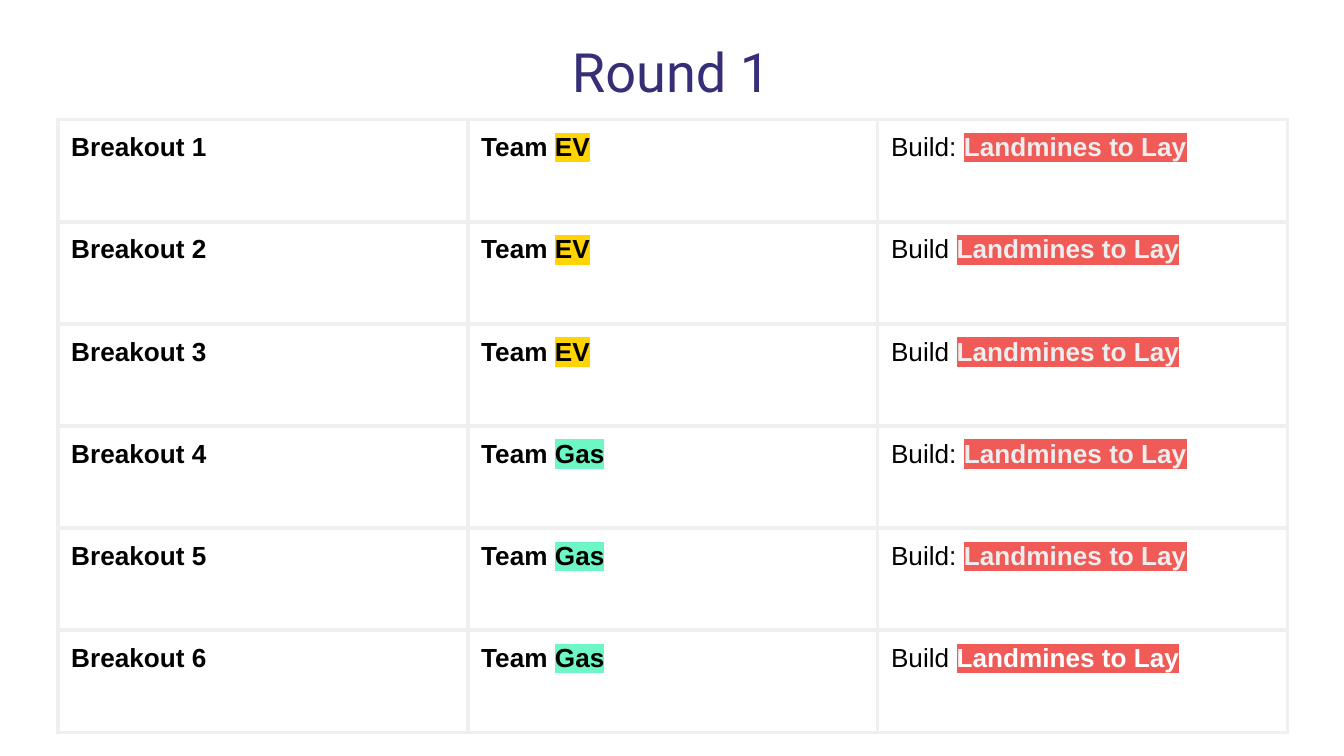
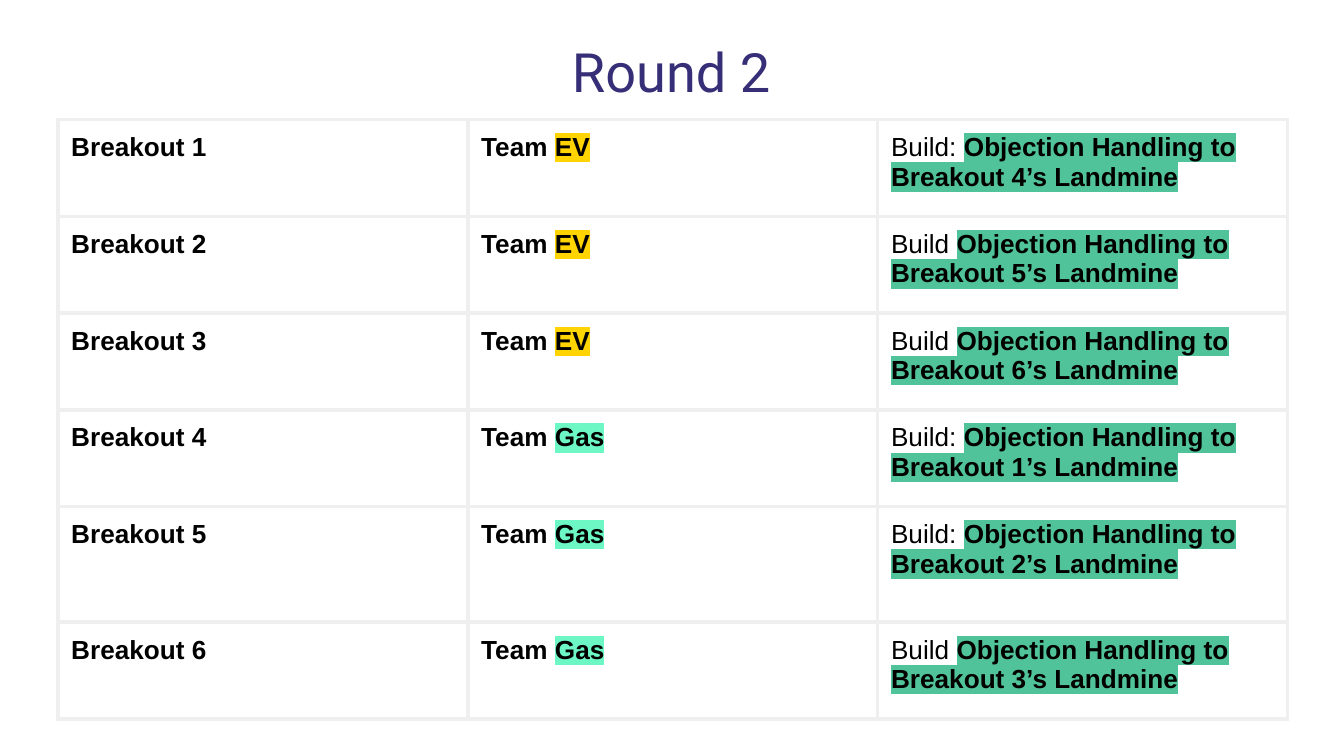
from lxml.etree import SubElement
from pptx import Presentation
from pptx.dml.color import RGBColor
from pptx.enum.text import MSO_ANCHOR, MSO_AUTO_SIZE, PP_ALIGN
from pptx.oxml.ns import qn
from pptx.util import Inches, Pt

COLORS = {
    "title": "362E77",
    "text": "000000",
    "border": "EFEFEF",
    "pale": "EEEEEE",
    "white": "FFFFFF",
    "ev": "FFD400",
    "gas": "6CF7C5",
    "landmine": "F05B58",
    "objection": "51C39A",
}
MARGIN = Inches(0.1)


def add_run(p, text, bold=True, color="text", highlight=None):
    r = p.add_run()
    r.text = text
    r.font.bold = bold
    r.font.color.rgb = RGBColor.from_string(COLORS[color])
    if highlight:
        mark = SubElement(r.font._element, qn("a:highlight"))
        SubElement(mark, qn("a:srgbClr"), val=COLORS[highlight])


def add_borders(cell):
    tcPr = cell._tc.get_or_add_tcPr()
    for side in ("lnL", "lnR", "lnT", "lnB"):
        ln = SubElement(tcPr, qn(f"a:{side}"), w=str(Pt(2.25)))
        fill = SubElement(ln, qn("a:solidFill"))
        SubElement(fill, qn("a:srgbClr"), val=COLORS["border"])


# Content shared by both rounds
teams = [("EV", "ev")] * 3 + [("Gas", "gas")] * 3
build_labels = ["Build: ", "Build ", "Build ", "Build: ", "Build: ", "Build "]

# Each task is its text, text colour and highlight
landmines = [("Landmines to Lay", "pale", "landmine")] * 5
landmines.append(("Landmines to Lay", "white", "landmine"))
objections = [
    (f"Objection Handling to Breakout {n}’s Landmine", "text", "objection")
    for n in (4, 5, 6, 1, 2, 3)
]
rounds = [
    ("Round 1", landmines, [0.76] * 6),
    ("Round 2", objections, [0.72] * 4 + [0.86, 0.72]),
]

# Widescreen 16:9
prs = Presentation()
prs.slide_width = Inches(10)
prs.slide_height = prs.slide_width * 9 // 16

for title, tasks, heights in rounds:
    s = prs.slides.add_slide(prs.slide_layouts[5])

    # Title
    sp = s.shapes.title
    sp.left, sp.top = Inches(1.82), Inches(0.19)
    sp.width, sp.height = Inches(6.35), Inches(0.68)
    tf = sp.text_frame
    tf.text = title
    tf.auto_size = MSO_AUTO_SIZE.NONE
    tf.vertical_anchor = MSO_ANCHOR.MIDDLE
    tf.margin_left = tf.margin_right = tf.margin_top = tf.margin_bottom = MARGIN
    p = tf.paragraphs[0]
    p.alignment = PP_ALIGN.CENTER
    p.font.name, p.font.size = "Roboto", Pt(29)
    p.font.color.rgb = RGBColor.from_string(COLORS["title"])

    # Breakout table
    table = s.shapes.add_table(
        6, 3, Inches(0.43), Inches(0.89), Inches(9.15), Inches(sum(heights))
    ).table
    table.first_row = table.horz_banding = False
    for column in table.columns:
        column.width = Inches(3.05)
    for row, height in zip(table.rows, heights):
        row.height = Inches(height)

    for cell in table.iter_cells():
        add_borders(cell)
        cell.fill.background()
        cell.margin_left = cell.margin_right = MARGIN
        cell.margin_top = cell.margin_bottom = MARGIN
        p = cell.text_frame.paragraphs[0]
        p.font.name, p.font.size = "Arial", Pt(14)

    # Breakout, team and task in each row
    for i, ((team, team_mark), label, (task, color, mark)) in enumerate(
        zip(teams, build_labels, tasks)
    ):
        breakout, side, build = (
            table.cell(i, j).text_frame.paragraphs[0] for j in range(3)
        )
        add_run(breakout, f"Breakout {i + 1}")
        add_run(side, "Team ")
        add_run(side, team, highlight=team_mark)
        add_run(build, label, bold=False)
        add_run(build, task, color=color, highlight=mark)

prs.save("out.pptx")
